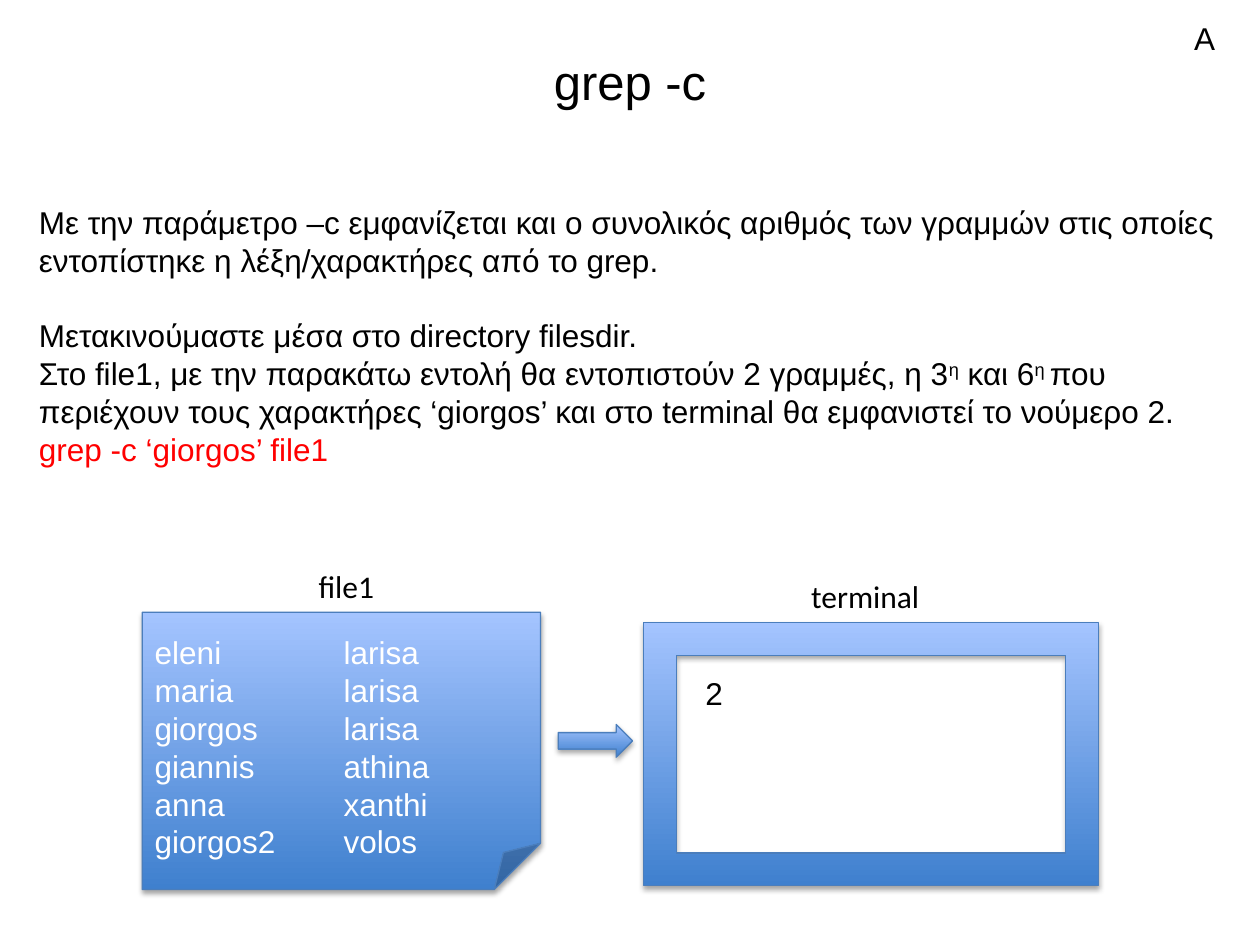
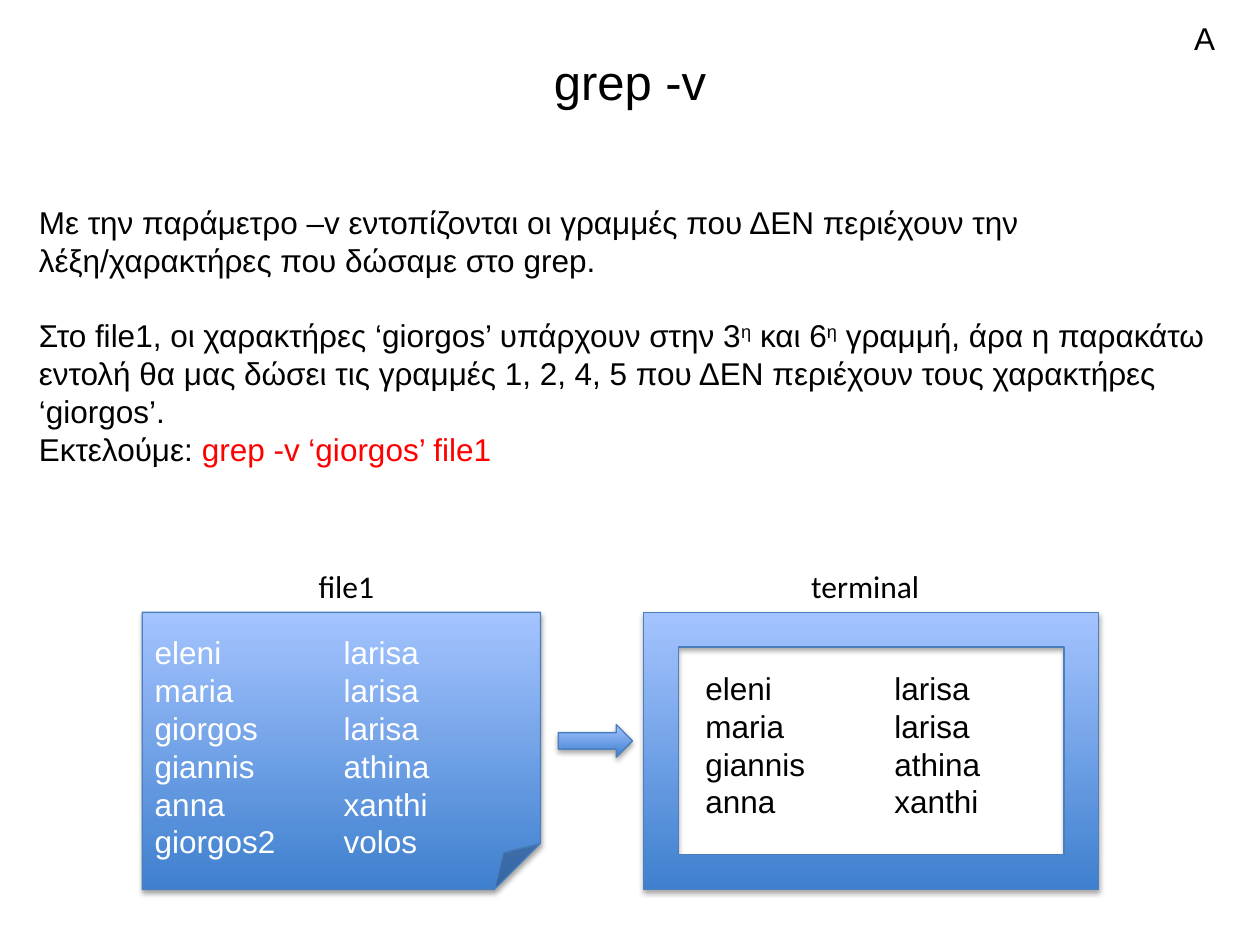
from lxml import etree
from pptx import Presentation
from pptx.dml.color import RGBColor
from pptx.enum.shapes import MSO_SHAPE
from pptx.enum.text import MSO_ANCHOR, PP_ALIGN
from pptx.oxml.ns import qn
from pptx.util import Inches, Pt

FOLDED, ARROW, FRAME = MSO_SHAPE.FOLDED_CORNER, MSO_SHAPE.RIGHT_ARROW, MSO_SHAPE.FRAME
TOP, MIDDLE = MSO_ANCHOR.TOP, MSO_ANCHOR.MIDDLE
LEFT, CENTER = PP_ALIGN.LEFT, PP_ALIGN.CENTER

COLORS = {"text": "000000", "command": "FF0000", "file": "FFFFFF",
          "deep": "3F80CE", "light": "A4C4FF", "outline": "4B7EBC"}
TEXT_SIZE, TITLE_SIZE, LINE_PITCH = 18, 28, 21.6
LABEL_RISE, LABEL_HEIGHT = 0.41, 0.4
FILE_TOP, FILE_HEIGHT = 4.86, 2.2
COLUMN_STOP = 1.5

FILE_ROWS = [("eleni", "larisa"), ("maria", "larisa"), ("giorgos", "larisa"),
             ("giannis", "athina"), ("anna", "xanthi"), ("giorgos2", "volos")]

SLIDES = [
    {
        "title": "grep -c",
        "intro": [("Με την παράμετρο –c εμφανίζεται και ο συνολικός αριθμός των γραμμών "
                   "στις οποίες εντοπίστηκε η λέξη/χαρακτήρες από το grep.", "")],
        "steps": [
            [("Μετακινούμαστε μέσα στο directory filesdir.", "")],
            [("Στο file1, με την παρακάτω εντολή θα εντοπιστούν 2 γραμμές, η 3", ""),
             ("η", "super"), (" και 6", ""), ("η ", "super"),
             ("που περιέχουν τους χαρακτήρες ‘giorgos’ και στο terminal "
              "θα εμφανιστεί το νούμερο 2.", "")],
            [("grep -c ‘giorgos’ file1", "command")],
        ],
        "frame": (4.94, 2.09),
        "output": [("2",)],
        "output_box": (5.3, 0.4),
    },
    {
        "title": "grep -v",
        "intro": [("Με την παράμετρο –v εντοπίζονται οι γραμμές που ΔΕΝ περιέχουν την "
                   "λέξη/χαρακτήρες που δώσαμε στο grep.", "")],
        "steps": [
            [("Στο file1, οι χαρακτήρες ‘giorgos’ υπάρχουν στην 3", ""),
             ("η", "super"), (" και 6", ""), ("η", "super"),
             (" γραμμή, άρα η παρακάτω εντολή θα μας δώσει τις γραμμές 1, 2, 4, 5 "
              "που ΔΕΝ περιέχουν τους χαρακτήρες ‘giorgos’.", "")],
            [("Εκτελούμε: ", ""), ("grep -v ‘giorgos’ file1", "command")],
        ],
        "frame": (FILE_TOP, FILE_HEIGHT),
        "output": [row for row in FILE_ROWS if "giorgos" not in row[0]],
        "output_box": (5.26, 1.31),
    },
]


def color(name):
    return RGBColor.from_string(COLORS[name])


def add_span(para, text, tone="text", font="Arial", size=TEXT_SIZE):
    span = para.add_run()
    span.text = text
    span.font.name = font
    span.font.size = Pt(size)
    span.font.color.rgb = color(tone)
    return span


def paragraphs(frame, count):
    return [frame.paragraphs[0]] + [frame.add_paragraph() for _ in range(count - 1)]


def add_box(page, left, top, width, height, wrap=True):
    box = page.shapes.add_textbox(*map(Inches, (left, top, width, height)))
    box.text_frame.word_wrap = wrap
    box.text_frame.vertical_anchor = TOP
    return box.text_frame


def add_label(page, text, left, top, width, font, wrap):
    frame = add_box(page, left, top, width, LABEL_HEIGHT, wrap)
    add_span(frame.paragraphs[0], text, font=font)


def add_glossy(page, kind, left, top, width, height):
    shape = page.shapes.add_shape(kind, *map(Inches, (left, top, width, height)))
    shape.fill.gradient()
    shape.fill.gradient_angle = 90
    for stop, (position, tone) in zip(shape.fill.gradient_stops, ((0, "deep"), (1, "light"))):
        stop.position = position
        stop.color.rgb = color(tone)
    shape.line.color.rgb = color("outline")
    shape.line.width = Pt(0.75)
    shape.shadow.inherit = False
    effects = shape._element.spPr.find(qn("a:effectLst"))
    shadow = etree.SubElement(effects, qn("a:outerShdw"), blurRad=str(Pt(3.1)),
                              dist=str(Pt(1.8)), dir="5400000", rotWithShape="0")
    black = etree.SubElement(shadow, qn("a:srgbClr"), val=COLORS["text"])
    etree.SubElement(black, qn("a:alpha"), val="35000")
    return shape


def write_rows(frame, rows, tone):
    for para, row in zip(paragraphs(frame, len(rows)), rows):
        para.alignment = LEFT
        para.line_spacing = Pt(LINE_PITCH)
        if len(row) > 1:
            tabs = etree.SubElement(para._p.get_or_add_pPr(), qn("a:tabLst"))
            etree.SubElement(tabs, qn("a:tab"), pos=str(Inches(COLUMN_STOP)), algn="l")
        add_span(para, "\t".join(row), tone)


def add_title(page, text):
    title = page.shapes.title
    title.left, title.top, title.width, title.height = map(Inches, (0.5, 0.3, 9, 0.68))
    title.text_frame.vertical_anchor = MIDDLE
    para = title.text_frame.paragraphs[0]
    para.alignment = CENTER
    add_span(para, text, size=TITLE_SIZE)


def add_explanation(page, intro, steps):
    frame = add_box(page, 0.21, 1.56, 9.61, 2.22)
    texts = [intro] + steps
    for index, (para, spans) in enumerate(zip(paragraphs(frame, len(texts)), texts)):
        para.line_spacing = Pt(LINE_PITCH)
        if index == 1:
            para.space_before = Pt(LINE_PITCH)
        for text, style in spans:
            span = add_span(para, text, "command" if style == "command" else "text")
            if style == "super":
                span._r.get_or_add_rPr().set("baseline", "30000")


def add_diagram(page, content):
    file_note = add_glossy(page, FOLDED, 1.13, FILE_TOP, 3.16, FILE_HEIGHT)
    note_text = file_note.text_frame
    note_text.vertical_anchor = MIDDLE
    note_text.margin_top, note_text.margin_bottom = Inches(0.35), Inches(0.05)
    write_rows(note_text, FILE_ROWS, "file")

    add_glossy(page, ARROW, 4.43, 5.75, 0.59, 0.26)
    terminal_top, terminal_height = content["frame"]
    add_glossy(page, FRAME, 5.11, terminal_top, 3.61, terminal_height)
    output_top, output_height = content["output_box"]
    write_rows(add_box(page, 5.5, output_top, 2.89, output_height), content["output"], "text")

    add_label(page, "file1", 2.43, FILE_TOP - LABEL_RISE, 0.65, "Calibri", False)
    add_label(page, "terminal", 6.34, terminal_top - LABEL_RISE, 1.07, "Calibri", False)


def main():
    deck = Presentation()
    deck.slide_width, deck.slide_height = Inches(10), Inches(7.5)
    title_only = deck.slide_layouts.get_by_name("Title Only")
    for content in SLIDES:
        page = deck.slides.add_slide(title_only)
        add_title(page, content["title"])
        add_explanation(page, content["intro"], content["steps"])
        add_diagram(page, content)
        add_label(page, "Α", 9.38, 0.1, 0.5, "Arial", True)
    deck.save("out.pptx")


if __name__ == "__main__":
    main()
